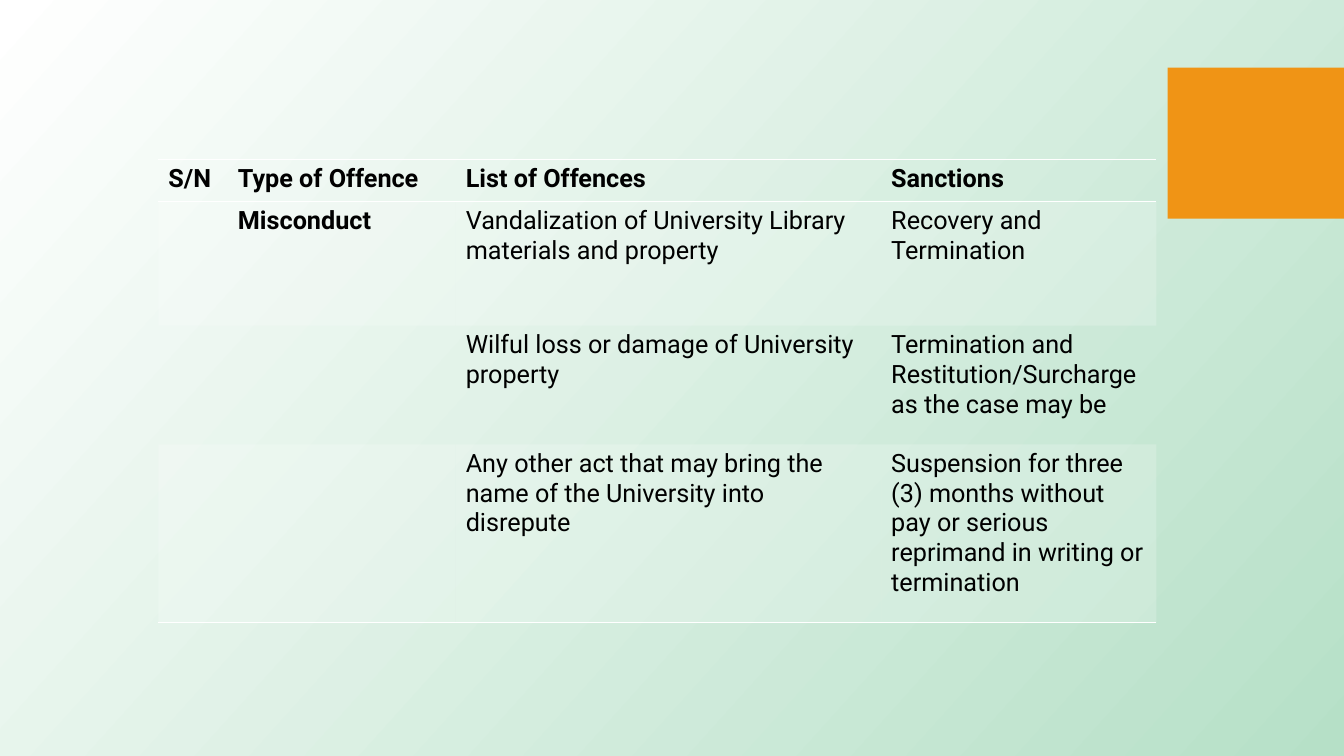
import pptx
import pptx.dml.color
import pptx.enum.shapes
import pptx.oxml
import pptx.oxml.ns
import pptx.util
from pptx.util import Inches

RGBColor = pptx.dml.color.RGBColor
WHITE = RGBColor(0xFF, 0xFF, 0xFF)
MINT = RGBColor(0xB6, 0xE0, 0xC7)
ORANGE = RGBColor(0xF0, 0x94, 0x15)
BLACK = RGBColor(0, 0, 0)

NO_GRID_STYLE = "{2D5ABB26-0587-4C30-8999-92F81FD0307C}"
COLUMN_WIDTHS = (0.69, 2.26, 4.22, 2.73)
ROW_HEIGHTS = (0.42, 1.23, 1.18, 1.77)
OFFENCES = (
    ("S/N", "Type of Offence", "List of Offences", "Sanctions"),
    ("", "Misconduct", "Vandalization of University Library materials and property",
     "Recovery and Termination"),
    ("", "", "Wilful loss or damage of University property",
     "Termination and Restitution/Surcharge as the case may be"),
    ("", "", "Any other act that may bring the name of the University into disrepute",
     "Suspension for three (3) months without pay or serious reprimand in writing "
     "or termination"),
)


class SlideBuilder:
    font_name = "Roboto"
    font_size = pptx.util.Pt(18)
    rule_width = pptx.util.Pt(1)

    def __init__(self, slide):
        self.slide = slide

    def gradient_background(self, start, end, angle):
        fill = self.slide.background.fill
        fill.gradient()
        fill.gradient_angle = 360 - angle
        for stop, color in zip(fill.gradient_stops, (start, end)):
            stop.color.rgb = color

    def block(self, left, top, width, height, color):
        block = self.slide.shapes.add_shape(
            pptx.enum.shapes.MSO_SHAPE.RECTANGLE,
            Inches(left), Inches(top), Inches(width), Inches(height))
        block.shadow.inherit = False
        block.fill.solid()
        block.fill.fore_color.rgb = color
        block.line.fill.background()

    def table(self, left, top, widths, heights, content):
        frame = self.slide.shapes.add_table(
            len(heights), len(widths), Inches(left), Inches(top),
            Inches(sum(widths)), Inches(sum(heights)))
        table = frame.table
        table.horz_banding = False
        style = table._tbl.tblPr.find(pptx.oxml.ns.qn("a:tableStyleId"))
        style.text = NO_GRID_STYLE
        for column, width in zip(table.columns, widths):
            column.width = Inches(width)
        for row, height in zip(table.rows, heights):
            row.height = Inches(height)
        last = len(heights) - 1
        for r, texts in enumerate(content):
            sides = {0: ("lnT", "lnB"), last: ("lnB",)}.get(r, ())
            for c, text in enumerate(texts):
                cell = table.cell(r, c)
                self.rule(cell, sides)
                self.shade(cell, r % 2 == 1)
                self.label(cell, text, bold=r == 0 or c == 1)

    def rule(self, cell, sides):
        for side in sides:
            cell._tc.get_or_add_tcPr().append(pptx.oxml.parse_xml(
                f'<a:{side} {pptx.oxml.ns.nsdecls("a")} w="{self.rule_width}">'
                f'<a:solidFill><a:srgbClr val="{WHITE}"/></a:solidFill></a:{side}>'))

    def shade(self, cell, banded):
        """Give banded cells a white veil of 20 % opacity, others no fill."""
        if not banded:
            cell.fill.background()
            return
        cell.fill.solid()
        cell.fill.fore_color.rgb = WHITE
        color = cell._tc.tcPr.find(
            f'{pptx.oxml.ns.qn("a:solidFill")}/{pptx.oxml.ns.qn("a:srgbClr")}')
        color.append(pptx.oxml.parse_xml(
            f'<a:alpha {pptx.oxml.ns.nsdecls("a")} val="20000"/>'))

    def label(self, cell, text, bold):
        cell.text_frame.text = text
        for run in cell.text_frame.paragraphs[0].runs:
            run.font.name = self.font_name
            run.font.size = self.font_size
            run.font.bold = bold
            run.font.color.rgb = BLACK


def main():
    presentation = pptx.Presentation()
    presentation.slide_width = Inches(13.33)
    presentation.slide_height = Inches(7.5)
    builder = SlideBuilder(presentation.slides.add_slide(presentation.slide_layouts[6]))
    builder.gradient_background(WHITE, MINT, angle=42)
    builder.block(11.58, 0.67, 1.75, 1.5, ORANGE)
    builder.table(1.57, 1.58, COLUMN_WIDTHS, ROW_HEIGHTS, OFFENCES)
    presentation.save("out.pptx")


if __name__ == "__main__":
    main()
